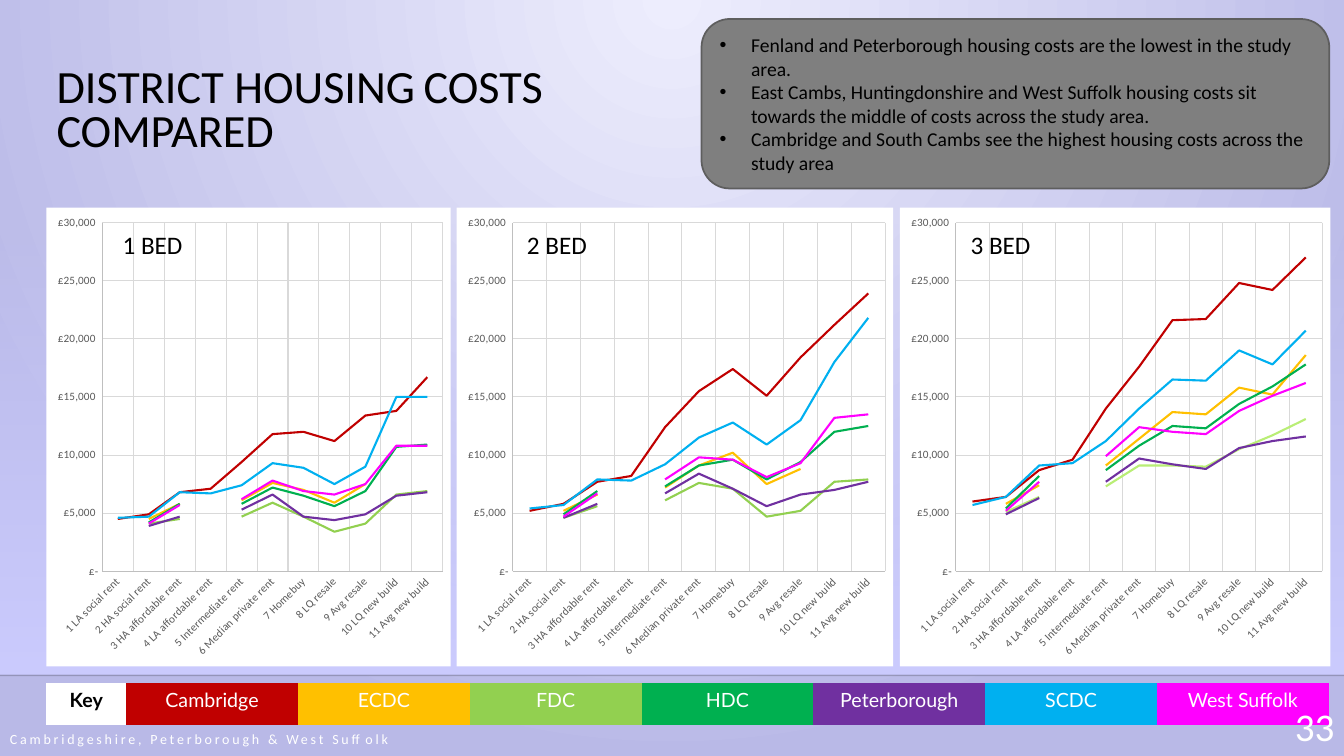
"""Build the slide comparing district housing costs by number of bedrooms."""
from pptx import Presentation
from pptx.chart.data import CategoryChartData
from pptx.dml.color import RGBColor
from pptx.enum.chart import XL_CHART_TYPE as ChartType, XL_TICK_MARK as TickMark
from pptx.enum.shapes import MSO_CONNECTOR as Connector, MSO_SHAPE as Shape
from pptx.enum.text import MSO_ANCHOR as Anchor, PP_ALIGN as Align
from pptx.oxml import parse_xml
from pptx.oxml.ns import nsdecls, qn
from pptx.util import Cm, Pt

COLORS = {
    "Cambridge": "C00000", "ECDC": "FFC000", "FDC": "92D050", "HDC": "00B050",
    "Peterborough": "7030A0", "SCDC": "00B0F0", "West Suffolk": "FF00FF",
    "pale FDC": "B9EE75", "Key": "FFFFFF", "white": "FFFFFF", "black": "000000",
    "glow": "EDEDFD", "edge": "B9B9E7", "haze": "CCCCFF", "rule": "000001",
    "panel": "7F7F7F", "panel line": "5E5E5E",
    "label": "595959", "axis": "BFBFBF", "grid": "D9D9D9",
}
DISTRICTS = ["Cambridge", "ECDC", "FDC", "HDC", "Peterborough", "SCDC", "West Suffolk"]
TITLE = [("DISTRICT HOUSING", 33), (" ", 26.4), ("COSTS COMPARED", 33)]
FOOTER = "Cambridgeshire, Peterborough & West Suffolk"
PAGE = "33"
FINDINGS = [
    "Fenland and Peterborough housing costs are the lowest in the study area.",
    "East Cambs, Huntingdonshire and West Suffolk housing costs sit towards the middle "
    "of costs across the study area.",
    "Cambridge and South Cambs see the highest housing costs across the study area",
]
TENURES = [
    "1 LA social rent", "2 HA social rent", "3 HA affordable rent", "4 LA affordable rent",
    "5 Intermediate rent", "6 Median private rent", "7 Homebuy", "8 LQ resale",
    "9 Avg resale", "10 LQ new build", "11 Avg new build",
]
COSTS = {
    "1 BED": [
        [4500, 4900, 6800, 7100, 9400, 11800, 12000, 11200, 13400, 13800, 16700],
        [None, 4500, 5800, None, 6100, 7600, 7000, 5900, 7500, None, None],
        [None, 4100, 4500, None, 4700, 5900, 4700, 3400, 4100, 6600, 6900],
        [None, 4200, 5800, None, 5800, 7200, 6500, 5600, 6900, 10700, 10900],
        [None, 3900, 4700, None, 5300, 6600, 4700, 4400, 4900, 6500, 6800],
        [4600, 4700, 6800, 6700, 7400, 9300, 8900, 7500, 9000, 15000, 15000],
        [None, 4100, 5700, None, 6200, 7800, 6900, 6600, 7500, 10800, 10800],
    ],
    "2 BED": [
        [5200, 5800, 7700, 8200, 12400, 15500, 17400, 15100, 18400, 21200, 23900],
        [None, 5200, 6600, None, 7200, 9100, 10200, 7500, 8800, None, None],
        [None, 4600, 5600, None, 6100, 7600, 7100, 4700, 5200, 7700, 7900],
        [None, 4900, 6900, None, 7300, 9100, 9600, 7900, 9400, 12000, 12500],
        [None, 4600, 5800, None, 6700, 8400, 7100, 5600, 6600, 7000, 7700],
        [5400, 5700, 7900, 7800, 9200, 11500, 12800, 10900, 13000, 18000, 21800],
        [None, 4700, 6700, None, 7900, 9800, 9600, 8100, 9300, 13200, 13500],
    ],
    "3 BED": [
        [6000, 6400, 8700, 9600, 14000, 17600, 21600, 21700, 24800, 24200, 27000],
        [None, 5800, 7400, None, 9100, 11400, 13700, 13500, 15800, 15200, 18600],
        [None, 5100, 6400, None, 7300, 9100, 9100, 9000, 10500, 11700, 13100],
        [None, 5400, 8200, None, 8700, 10800, 12500, 12300, 14400, 15900, 17800],
        [None, 4900, 6300, None, 7700, 9700, 9200, 8800, 10600, 11200, 11600],
        [5700, 6400, 9100, 9300, 11200, 14000, 16500, 16400, 19000, 17800, 20700],
        [None, 5200, 7700, None, 9900, 12400, 12000, 11800, 13800, 15100, 16200],
    ],
}
CHART_SPANS = {"1 BED": (1.17, 10.19), "2 BED": (11.51, 11), "3 BED": (22.68, 10.85)}
BED_SPANS = {"1 BED": (2.84, 2.84), "2 BED": (13.03, 3.99), "3 BED": (24.21, 3.23)}
CHART_TOP, CHART_HEIGHT = 5.23, 11.56
PLOT_LEFT, PLOT_RIGHT, PLOT_TOP, PLOT_HEIGHT = 1.41, 0.2, 0.38, 8.79
KEY_WIDTH, DISTRICT_WIDTH, KEY_HEIGHT = 2.01, 4.33, 1.04
SLIDE_WIDTH, SLIDE_HEIGHT = 33.87, 19.05
POUNDS = '_-"£"* #,##0_-;\\-"£"* #,##0_-;_-"£"* "-"'
NO_STYLE = "{2D5ABB26-0587-4C30-8999-92F81FD0307C}"


def rgb(name):
    return RGBColor.from_string(COLORS[name])


def style(font, size, color="black", face="Calibri"):
    font.size, font.name = Pt(size), face
    font.color.rgb = rgb(color)


def write(paragraph, words, size, color="black", face="Calibri"):
    run = paragraph.add_run()
    run.text = words
    style(run.font, size, color, face)
    return run


def add_label(slide, box, words, size, color="black"):
    label = slide.shapes.add_textbox(*map(Cm, box))
    label.text_frame.word_wrap = True
    return label.text_frame, write(label.text_frame.paragraphs[0], words, size, color)


def gradient(stops, direction):
    marks = "".join(
        f'<a:gs pos="{pos}"><a:srgbClr val="{COLORS[name]}"><a:alpha val="{alpha}"/></a:srgbClr></a:gs>'
        for pos, name, alpha in stops)
    return parse_xml(f'<a:gradFill {nsdecls("a")} rotWithShape="1"><a:gsLst>{marks}</a:gsLst>'
                     f'{direction}</a:gradFill>')


def replace_fill(fill, parent, new_fill):
    fill.solid()
    old_fill = next(parent.iter(qn("a:solidFill")))
    old_fill.getparent().replace(old_fill, new_fill)


def add_backdrop(slide):
    glow = gradient([(0, "glow", 100000), (100000, "edge", 100000)],
                    '<a:path path="circle"><a:fillToRect l="43000" t="0" r="43000" b="100000"/></a:path>')
    replace_fill(slide.background.fill, slide.element, glow)
    haze = slide.shapes.add_shape(Shape.RECTANGLE, 0, Cm(5.61), Cm(SLIDE_WIDTH), Cm(11.4))
    haze.shadow.inherit = False
    haze.line.fill.background()
    fade = gradient([(0, "haze", 0), (100000, "haze", 100000)], '<a:lin ang="5400000" scaled="0"/>')
    replace_fill(haze.fill, haze.element.spPr, fade)
    rule = slide.shapes.add_connector(Connector.STRAIGHT, 0, Cm(17.02), Cm(SLIDE_WIDTH), Cm(17.02))
    rule.line.color.rgb, rule.line.width = rgb("rule"), Pt(1)
    tint = next(rule.element.spPr.iter(qn("a:srgbClr")))
    tint.append(parse_xml(f'<a:alpha {nsdecls("a")} val="20000"/>'))
    rule.element.spPr.append(parse_xml(f'<a:effectLst {nsdecls("a")}/>'))


def add_cost_chart(slide, beds):
    left, width = CHART_SPANS[beds]
    data = CategoryChartData(number_format=POUNDS)
    data.categories = TENURES
    for district, costs in zip(DISTRICTS, COSTS[beds]):
        data.add_series(district, costs)
    chart = slide.shapes.add_chart(ChartType.LINE, Cm(left), Cm(CHART_TOP), Cm(width),
                                   Cm(CHART_HEIGHT), data).chart
    chart.has_title = chart.has_legend = False
    style(chart.font, 10)
    for axis in (chart.category_axis, chart.value_axis):
        axis.major_tick_mark = axis.minor_tick_mark = TickMark.NONE
        axis.has_major_gridlines = True
        style(axis.tick_labels.font, 8, "label")
        for line, color in ((axis.format.line, "axis"), (axis.major_gridlines.format.line, "grid")):
            line.color.rgb, line.width = rgb(color), Pt(0.75)
    costs_axis = chart.value_axis
    costs_axis.minimum_scale, costs_axis.maximum_scale, costs_axis.major_unit = 0, 30000, 5000
    costs_axis.tick_labels.number_format = POUNDS
    costs_axis.tick_labels.number_format_is_linked = False
    next(chart.category_axis._element.iter(qn("a:bodyPr"))).set("rot", "-2700000")
    for series in chart.plots[0].series:
        pale = beds == "3 BED" and series.name == "FDC"
        series.smooth = False
        series.format.line.color.rgb = rgb("pale FDC" if pale else series.name)
        series.format.line.width = Pt(1.5)

    body = chart._chartSpace.find(qn("c:chart"))
    body.addnext(parse_xml(
        f'<c:spPr {nsdecls("c", "a")}><a:solidFill><a:srgbClr val="{COLORS["white"]}"/></a:solidFill>'
        '<a:ln><a:noFill/></a:ln></c:spPr>'))
    plot_area = body.find(qn("c:plotArea"))
    for layout in plot_area.findall(qn("c:layout")):
        plot_area.remove(layout)
    places = {"x": PLOT_LEFT / width, "y": PLOT_TOP / CHART_HEIGHT,
              "w": (width - PLOT_LEFT - PLOT_RIGHT) / width, "h": PLOT_HEIGHT / CHART_HEIGHT}
    modes = '<c:layoutTarget val="inner"/><c:xMode val="edge"/><c:yMode val="edge"/>'
    sizes = "".join(f'<c:{side} val="{share:.4f}"/>' for side, share in places.items())
    plot_area.insert(0, parse_xml(
        f'<c:layout {nsdecls("c")}><c:manualLayout>{modes}{sizes}</c:manualLayout></c:layout>'))


def add_key(slide):
    names = ["Key"] + DISTRICTS
    widths = [KEY_WIDTH] + [DISTRICT_WIDTH] * len(DISTRICTS)
    frame = slide.shapes.add_table(1, len(names), Cm(1.17), Cm(17.22), Cm(sum(widths)), Cm(KEY_HEIGHT))
    key = frame.table
    key.first_row = key.horz_banding = False
    next(frame.element.iter(qn("a:tableStyleId"))).text = NO_STYLE
    for column, cell, name, width in zip(key.columns, key.rows[0].cells, names, widths):
        column.width = Cm(width)
        cell.fill.solid()
        cell.fill.fore_color.rgb = rgb(name)
        paragraph = cell.text_frame.paragraphs[0]
        paragraph.alignment = Align.CENTER
        heading = name == "Key"
        write(paragraph, name, 14, "black" if heading else "white", "Lato").font.bold = heading


def add_findings(slide):
    panel = slide.shapes.add_shape(Shape.ROUNDED_RECTANGLE, Cm(17.68), Cm(0.48), Cm(15.82), Cm(4.27))
    panel.shadow.inherit = False
    panel.fill.solid()
    panel.fill.fore_color.rgb = rgb("panel")
    panel.line.color.rgb, panel.line.width = rgb("panel line"), Pt(1.25)
    text = panel.text_frame
    text.word_wrap, text.vertical_anchor = True, Anchor.MIDDLE
    for index, finding in enumerate(FINDINGS):
        paragraph = text.add_paragraph() if index else text.paragraphs[0]
        paragraph.alignment = Align.LEFT
        properties = paragraph._p.get_or_add_pPr()
        properties.set("marL", str(Cm(0.79)))
        properties.set("indent", str(-Cm(0.79)))
        properties.append(parse_xml(f'<a:buFont {nsdecls("a")} typeface="Arial"/>'))
        properties.append(parse_xml(f'<a:buChar {nsdecls("a")} char="•"/>'))
        write(paragraph, finding, 14)


def main():
    deck = Presentation()
    deck.slide_width, deck.slide_height = Cm(SLIDE_WIDTH), Cm(SLIDE_HEIGHT)
    slide = deck.slides.add_slide(deck.slide_layouts[5])
    add_backdrop(slide)
    title = slide.shapes.title
    title.left, title.top, title.width, title.height = map(Cm, (1.17, 1.57, 15.16, 2.51))
    title.text_frame.vertical_anchor = Anchor.MIDDLE
    heading = title.text_frame.paragraphs[0]
    heading.alignment, heading.line_spacing = Align.LEFT, 0.8
    for words, size in TITLE:
        write(heading, words, size)
    footer, footer_run = add_label(slide, (0, 18.19, 13.82, 0.86), FOOTER, 10, "white")
    footer.vertical_anchor = Anchor.MIDDLE
    footer_run.font._element.set("spc", "200")
    for beds in COSTS:
        add_cost_chart(slide, beds)
    add_key(slide)
    add_findings(slide)
    page, _ = add_label(slide, (31.62, 17.58, 2.26, 1.4), PAGE, 28, "white")
    page.paragraphs[0].alignment = Align.RIGHT
    for beds, (left, width) in BED_SPANS.items():
        add_label(slide, (left, 5.66, width, 1.02), beds, 18)
    deck.save("out.pptx")


if __name__ == "__main__":
    main()
